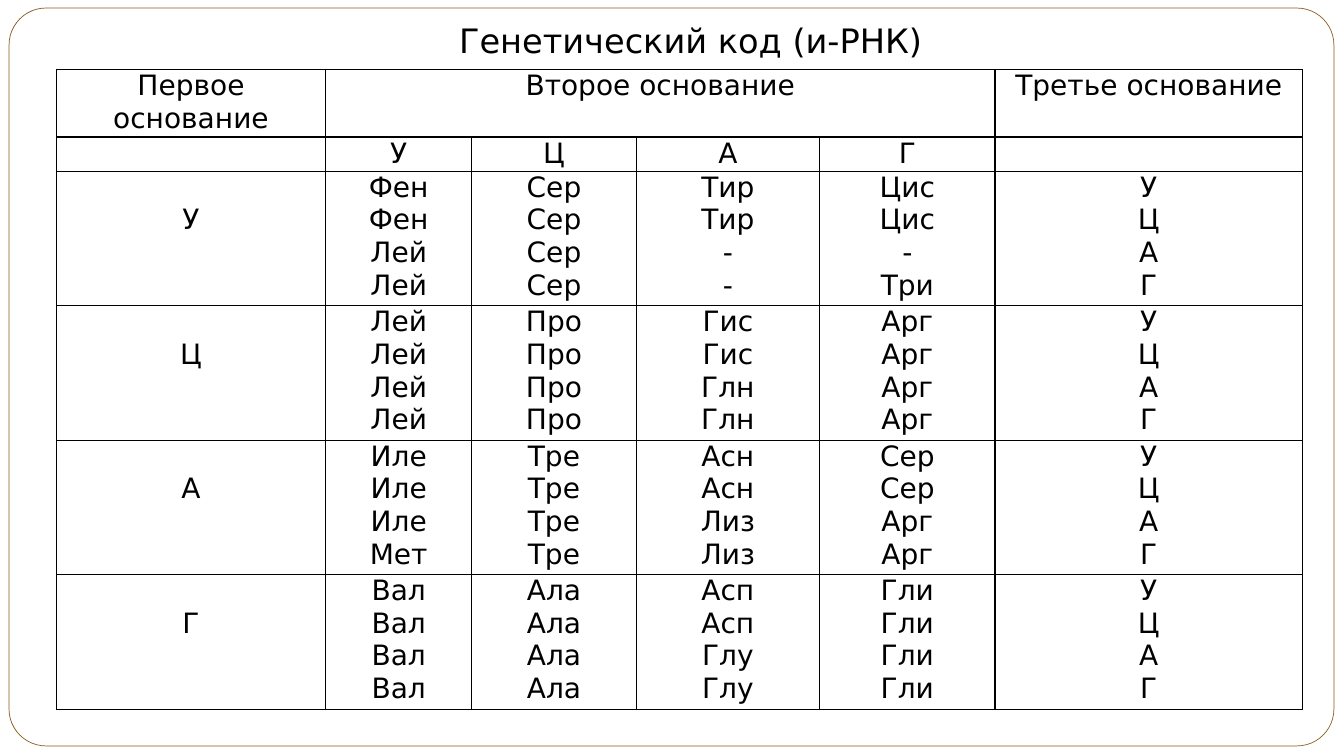
from lxml import etree
from pptx import Presentation
from pptx.dml.color import RGBColor
from pptx.enum.shapes import MSO_SHAPE as SHAPE
from pptx.enum.text import MSO_ANCHOR as ANCHOR, PP_ALIGN as ALIGN
from pptx.oxml.ns import qn
from pptx.util import Inches, Pt

BLACK = RGBColor(0x00, 0x00, 0x00)
WHITE = RGBColor(0xFF, 0xFF, 0xFF)
BROWN = RGBColor(0x89, 0x5D, 0x1D)

TITLE_FORMAT = {"name": "DejaVu Sans", "size": Pt(24), "bold": False}
CELL_FORMAT = {"name": "DejaVu Sans", "size": Pt(20), "bold": False}

COL_WIDTHS = [2.67, 1.45, 1.63, 1.82, 1.74, 3.05]
ROW_HEIGHTS = [0.67, 0.34] + [1.33] * 4
LINE_HEIGHT = 0.32

BASES = ["У", "Ц", "А", "Г"]
# One row per first base, one entry per second base, one word per third base
AMINO_ACIDS = [
    ["Фен Фен Лей Лей", "Сер Сер Сер Сер", "Тир Тир - -", "Цис Цис - Три"],
    ["Лей Лей Лей Лей", "Про Про Про Про", "Гис Гис Глн Глн", "Арг Арг Арг Арг"],
    ["Иле Иле Иле Мет", "Тре Тре Тре Тре", "Асн Асн Лиз Лиз", "Сер Сер Арг Арг"],
    ["Вал Вал Вал Вал", "Ала Ала Ала Ала", "Асп Асп Глу Глу", "Гли Гли Гли Гли"],
]


def write_lines(tf, lines, formats):
    """Fill a text frame with centred paragraphs."""
    for i, line in enumerate(lines):
        p = tf.paragraphs[0] if i == 0 else tf.add_paragraph()
        p.alignment = ALIGN.CENTER
        r = p.add_run()
        r.text = line
        r.font.color.rgb = BLACK
        for name, value in formats.items():
            setattr(r.font, name, value)


def add_frame(slide):
    sp = slide.shapes.add_shape(SHAPE.ROUNDED_RECTANGLE, Inches(0.09),
                                Inches(0.08), Inches(13.14), Inches(7.32))
    sp.adjustments[0] = 0.05
    sp.shadow.inherit = False
    sp.fill.solid()
    sp.fill.fore_color.rgb = WHITE
    sp.line.color.rgb = BROWN
    sp.line.width = Pt(0.5)


def add_title(slide, text):
    sp = slide.shapes.add_textbox(Inches(4.44), Inches(0.15),
                                  Inches(4.82), Inches(0.5))
    tf = sp.text_frame
    tf.word_wrap = False
    tf.vertical_anchor = ANCHOR.MIDDLE
    write_lines(tf, [text], TITLE_FORMAT)


def style_cell(cell):
    """Thin black borders, no fill, no vertical margins."""
    cell.margin_left = cell.margin_right = Inches(0.1)
    cell.margin_top = cell.margin_bottom = 0
    tc_pr = cell._tc.get_or_add_tcPr()
    for side in ("a:lnL", "a:lnR", "a:lnT", "a:lnB"):
        ln = etree.SubElement(tc_pr, qn(side), w=str(Pt(1)))
        fill = etree.SubElement(ln, qn("a:solidFill"))
        etree.SubElement(fill, qn("a:srgbClr"), val=str(BLACK))
    cell.fill.background()


def add_code_table(slide):
    frame = slide.shapes.add_table(
        len(ROW_HEIGHTS), len(COL_WIDTHS), Inches(0.56), Inches(0.69),
        Inches(sum(COL_WIDTHS)), Inches(sum(ROW_HEIGHTS)))
    table = frame.table
    table.first_row = table.horz_banding = False
    for col, width in zip(table.columns, COL_WIDTHS):
        col.width = Inches(width)
    for row, height in zip(table.rows, ROW_HEIGHTS):
        row.height = Inches(height)
    for cell in table.iter_cells():
        style_cell(cell)

    def put(row, col, lines):
        write_lines(table.cell(row, col).text_frame, lines, CELL_FORMAT)

    # Headings
    table.cell(0, 1).merge(table.cell(0, 4))
    put(0, 0, ["Первое основание"])
    put(0, 1, ["Второе основание"])
    put(0, 5, ["Третье основание"])
    for col, base in enumerate(BASES, 1):
        put(1, col, [base])

    # Codon rows, with the first base level with the second line
    for row, (base, acids) in enumerate(zip(BASES, AMINO_ACIDS), 2):
        put(row, 0, [base])
        table.cell(row, 0).margin_top = Inches(LINE_HEIGHT)
        for col, group in enumerate(acids, 1):
            put(row, col, group.split())
        put(row, 5, BASES)


def main():
    prs = Presentation()
    prs.slide_width, prs.slide_height = Inches(13.33), Inches(7.5)
    slide = prs.slides.add_slide(prs.slide_layouts[6])
    add_frame(slide)
    add_title(slide, "Генетический код (и-РНК)")
    add_code_table(slide)
    prs.save("out.pptx")


if __name__ == "__main__":
    main()
